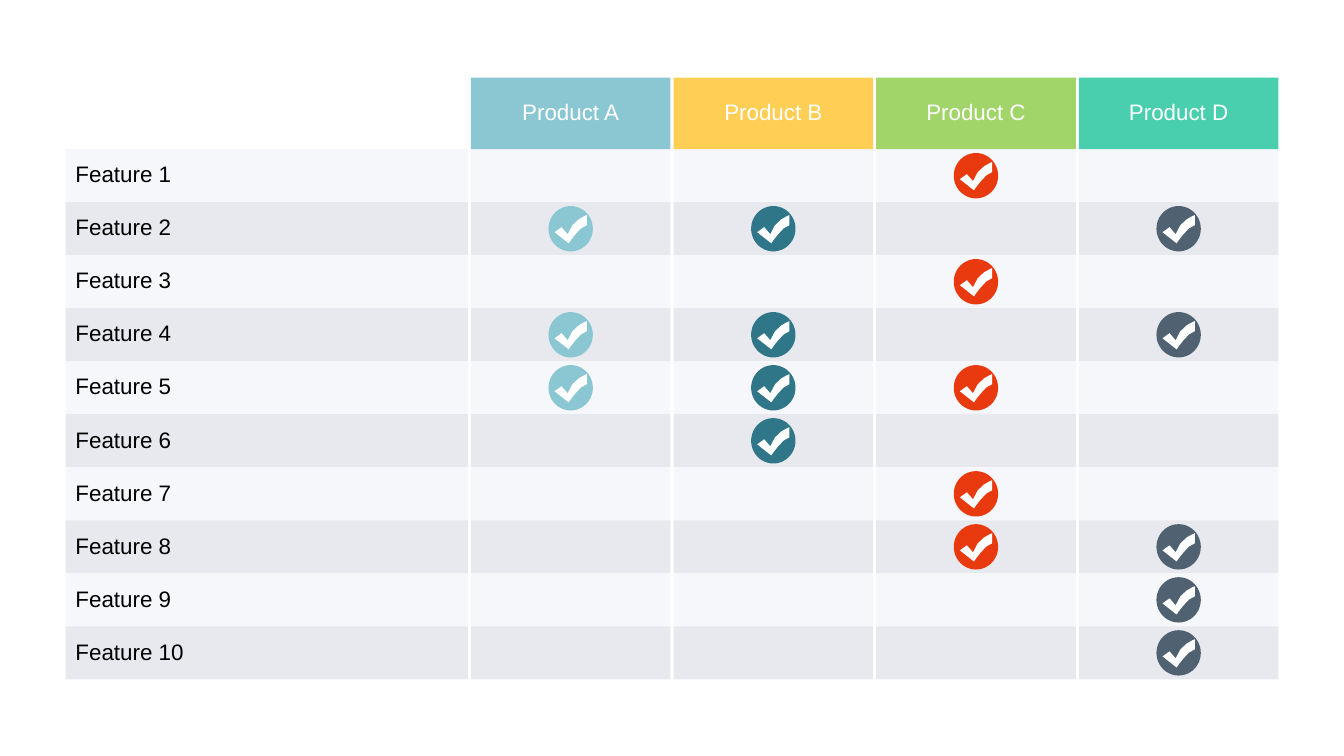
from pptx import Presentation
from pptx import util as u
from pptx.dml.color import RGBColor
from pptx.enum import shapes, text

# Grid, in inches
LEFT, TOP, HEADER_TOP = 0.65, 1.48, 0.77
LABEL_WIDTH, CELL_WIDTH, GAP = 3.99, 1.98, 0.03
ROW_COUNT = 10
ROW_HEIGHT = 5.26 / ROW_COUNT
DISC_WIDTH, DISC_HEIGHT = 0.44, 0.45
ROW_COLORS = ["F6F7FA", "E7E9EE"]

# Name, header colour, disc colour, features included
PRODUCTS = [
    ("Product A", "8AC7D3", "8AC7D3", [2, 4, 5]),
    ("Product B", "FFCE54", "307689", [2, 4, 5, 6]),
    ("Product C", "A1D469", "E93A0F", [1, 3, 5, 7, 8]),
    ("Product D", "49CFAE", "506272", [2, 4, 8, 9, 10]),
]


def paint(fill, color):
    fill.solid()
    fill.fore_color.rgb = RGBColor.from_string(color)


def write(shape, words, color="000000", align=text.PP_ALIGN.LEFT, size=16, font="Arial"):
    frame = shape.text_frame
    frame.word_wrap = True
    frame.vertical_anchor = text.MSO_ANCHOR.MIDDLE
    paragraph = frame.paragraphs[0]
    paragraph.alignment = align
    paragraph.line_spacing = 0.9
    paragraph.space_before = u.Pt(10)
    run = paragraph.add_run()
    run.text = words
    run.font.size, run.font.name = u.Pt(size), font
    paint(run.font.fill, color)


presentation = Presentation()
presentation.slide_width, presentation.slide_height = u.Inches(13.33), u.Inches(7.5)
slide = presentation.slides.add_slide(presentation.slide_layouts[6])

# Columns: the feature labels, then one per product
columns = [(LEFT, LABEL_WIDTH)]
for product in PRODUCTS:
    previous_left, previous_width = columns[-1]
    columns.append((previous_left + previous_width + GAP, CELL_WIDTH))

# Striped cells with feature labels
for row in range(ROW_COUNT):
    for column, (left, width) in enumerate(columns):
        cell = slide.shapes.add_shape(
            shapes.MSO_SHAPE.RECTANGLE, u.Inches(left), u.Inches(TOP + row * ROW_HEIGHT),
            u.Inches(width), u.Inches(ROW_HEIGHT))
        paint(cell.fill, ROW_COLORS[row % 2])
        if column == 0:
            write(cell, f"Feature {row + 1}")

# Tick outline in thousandths of an inch: two cubic curves joined by straight edges
upper_curve = [(320, 0), (320, 0), (170, 50), (130, 190)]
lower_curve = [(140, 280), (140, 280), (250, 110), (320, 100)]
outlines = []
for curve in (upper_curve, lower_curve):
    outline = []
    for step in range(5):
        t = step / 4
        weights = [(1 - t) ** 3, 3 * t * (1 - t) ** 2, 3 * t ** 2 * (1 - t), t ** 3]
        outline.append(tuple(sum(w * point[axis] for w, point in zip(weights, curve))
                             for axis in (0, 1)))
    outlines.append(outline)
tick_points = outlines[0] + [(70, 120), (0, 170)] + outlines[1]

# Product headers and ticks
for (name, header_color, disc_color, features), (left, width) in zip(PRODUCTS, columns[1:]):
    header = slide.shapes.add_shape(
        shapes.MSO_SHAPE.RECTANGLE, u.Inches(left), u.Inches(HEADER_TOP),
        u.Inches(width), u.Inches(TOP - HEADER_TOP))
    paint(header.fill, header_color)
    write(header, name, color="FFFFFF", align=text.PP_ALIGN.CENTER)

    for feature in features:
        disc_left = left + (width - DISC_WIDTH) / 2
        disc_top = TOP + (feature - 1) * ROW_HEIGHT + (ROW_HEIGHT - DISC_HEIGHT) / 2
        disc = slide.shapes.add_shape(
            shapes.MSO_SHAPE.OVAL, u.Inches(disc_left), u.Inches(disc_top),
            u.Inches(DISC_WIDTH), u.Inches(DISC_HEIGHT))
        paint(disc.fill, disc_color)

        builder = slide.shapes.build_freeform(*tick_points[0], scale=u.Inches(1) / 1000)
        builder.add_line_segments(tick_points[1:], close=True)
        tick = builder.convert_to_shape(u.Inches(disc_left + 0.06), u.Inches(disc_top + 0.09))
        paint(tick.fill, "FFFFFF")

# Flat look for every shape
for shape in slide.shapes:
    shape.shadow.inherit = False
    shape.line.fill.background()

presentation.save("out.pptx")
